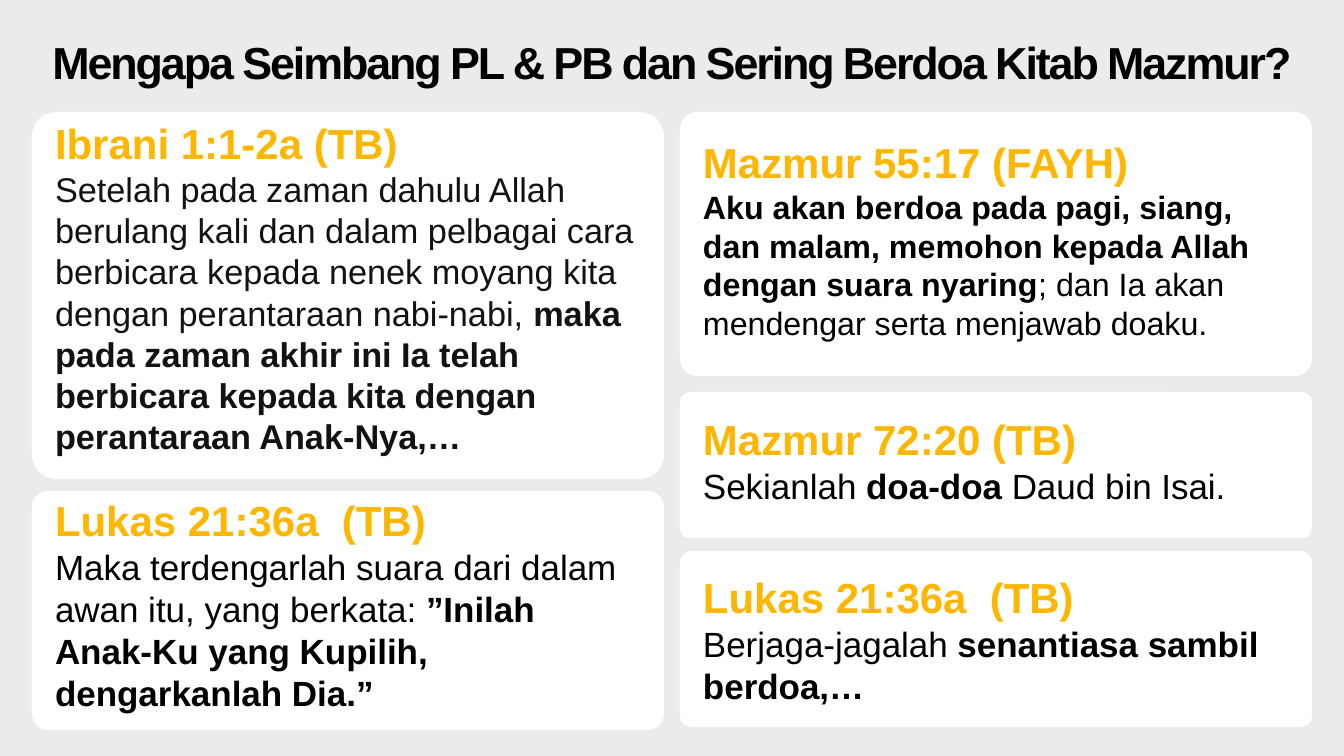
from pptx import Presentation
from pptx import util as u
from pptx.dml import color
from pptx.enum import shapes, text

PX = 12192000 / 1344
LEFT, RIGHT, WIDE = 32, 680, 632
INSET = 23
GOLD, BLACK, INK = "FFB600", "000000", "121212"

VERSES = [
    (LEFT, 112, 367, 118, 617, "Ibrani 1:1-2a (TB)", 24.5, INK, [
        ("Setelah pada zaman dahulu Allah berulang kali dan dalam pelbagai cara "
         "berbicara kepada nenek moyang kita dengan perantaraan nabi-nabi, ", False),
        ("maka pada zaman akhir ini Ia telah berbicara kepada kita dengan "
         "perantaraan Anak-Nya,…", True)]),
    (LEFT, 491, 239, 495, 583, "Lukas 21:36a  (TB)", 25, BLACK, [
        ("Maka terdengarlah suara dari dalam awan itu, yang berkata:", False),
        (" ”Inilah Anak-Ku yang Kupilih, dengarkanlah Dia.”", True)]),
    (RIGHT, 112, 264, 137, 610, "Mazmur 55:17 (FAYH)", 23, BLACK, [
        ("Aku akan berdoa pada pagi, siang,\n"
         "dan malam, memohon kepada Allah dengan suara nyaring", True),
        ("; dan Ia akan mendengar serta menjawab doaku.", False)]),
    (RIGHT, 392, 146, 414, 583, "Mazmur 72:20 (TB)", 25, BLACK, [
        ("Sekianlah ", False), ("doa-doa ", True), ("Daud bin Isai.", False)]),
    (RIGHT, 551, 176, 572, 610, "Lukas 21:36a  (TB)", 25, BLACK, [
        ("Berjaga-jagalah ", False), ("senantiasa sambil berdoa,…", True)]),
]


def px(n):
    return u.Emu(round(n * PX))


def rgb(code):
    return color.RGBColor.from_string(code)


def write(para, words, size, ink, bold=False, track=0):
    for i, line in enumerate(words.split("\n")):
        if i:
            para.add_line_break()
        run = para.add_run()
        run.text = line
        font = run.font
        font.name, font.size, font.bold = "Arial", u.Pt(size), bold
        font.color.rgb = rgb(ink)
        if track:
            run._r.get_or_add_rPr().set("spc", str(track))


def setup(frame):
    frame.word_wrap = True
    frame.auto_size = text.MSO_AUTO_SIZE.NONE
    frame.vertical_anchor = text.MSO_ANCHOR.TOP
    frame.margin_left = frame.margin_right = 0
    frame.margin_top = frame.margin_bottom = 0
    return frame


def title(slide, words):
    box = slide.shapes.title
    box.left, box.top, box.width, box.height = px(0), px(35), px(1344), px(54)
    para = setup(box.text_frame).paragraphs[0]
    para.alignment = text.PP_ALIGN.CENTER
    write(para, words, 32, BLACK, bold=True, track=-150)


def card(slide, left, top, high):
    box = slide.shapes.add_shape(shapes.MSO_SHAPE.ROUNDED_RECTANGLE,
                                 px(left), px(top), px(WIDE), px(high))
    box.adjustments[0] = 0.066
    box.shadow.inherit = False
    box.fill.solid()
    box.fill.fore_color.rgb = rgb("FFFFFF")
    box.line.fill.background()


def verse(slide, left, top, high, start, wide, head, size, ink, parts):
    card(slide, left, top, high)
    box = slide.shapes.add_textbox(px(left + INSET), px(start), px(wide),
                                   px(top + high - start))
    frame = setup(box.text_frame)
    write(frame.paragraphs[0], head, 30, GOLD, bold=True)
    para = frame.add_paragraph()
    for words, bold in parts:
        write(para, words, size, ink, bold=bold)


def main():
    deck = Presentation()
    deck.slide_width, deck.slide_height = px(1344), px(756)
    slide = deck.slides.add_slide(deck.slide_layouts[5])
    fill = slide.background.fill
    fill.solid()
    fill.fore_color.rgb = rgb("EBEBEB")
    title(slide, "Mengapa Seimbang PL & PB dan Sering Berdoa Kitab Mazmur?")
    for item in VERSES:
        verse(slide, *item)
    deck.save("out.pptx")


if __name__ == "__main__":
    main()
